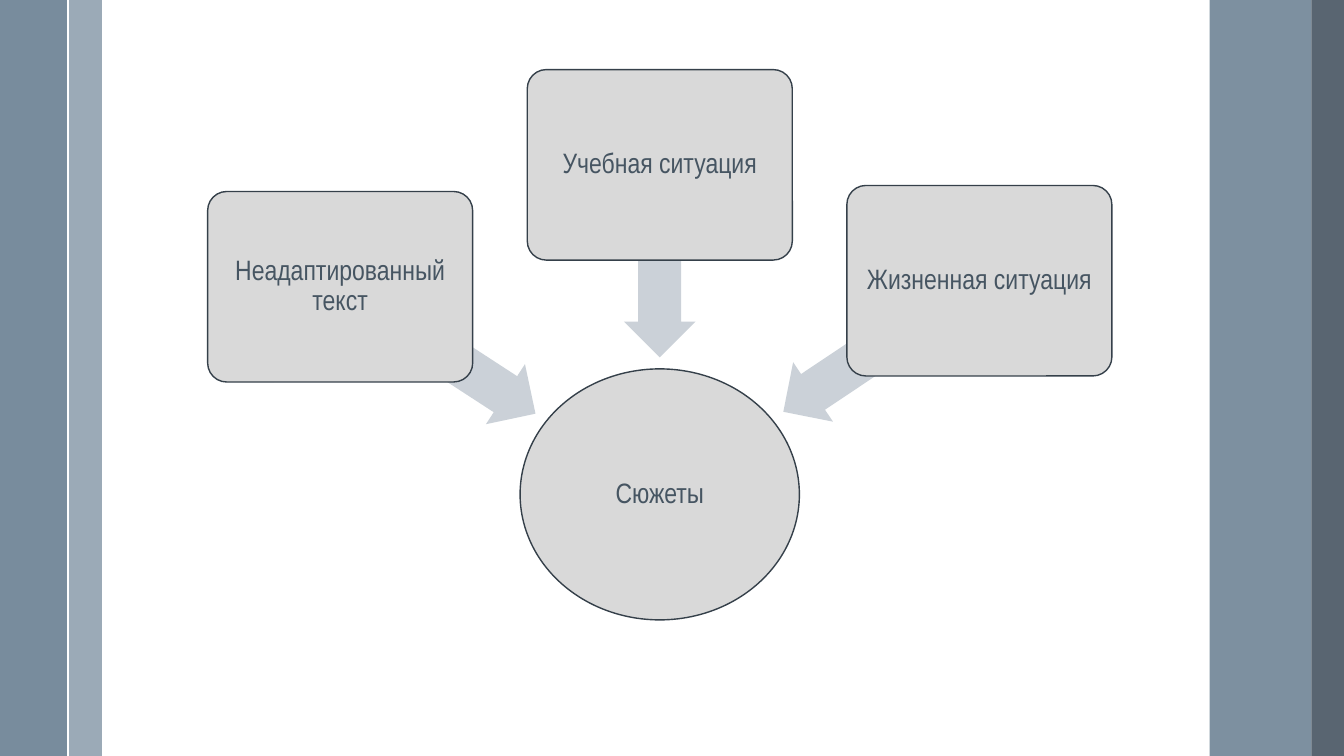
from math import atan2, cos, degrees, sin

from lxml.etree import SubElement
from pptx import Presentation
from pptx.dml.color import RGBColor
from pptx.enum.shapes import MSO_CONNECTOR, MSO_SHAPE
from pptx.enum.text import MSO_ANCHOR, PP_ALIGN
from pptx.oxml.ns import qn
from pptx.util import Inches, Pt

SLIDE_WIDTH, SLIDE_HEIGHT = Inches(13.33), Inches(7.5)

# Places and sizes in percent of the slide
HUB_CENTER, HUB_SIZE = (49.09, 65.4), (20.78, 33.2)
CARD_SIZE = (19.72, 25.2)
CARD_STEP = 23.78
ARROW_THICKNESS = 9.47

# Left, width, colour, opacity
BANDS = [
    (5.1, 2.48, "9BAAB7", 100),
    (0, 5.03, "6A8093", 90),
    (90, 7.58, "6A8093", 87),
    (97.58, 2.42, "475562", 90),
]
# Label, column from the hub, vertical centre, arrow length
CARDS = [
    ("Неадаптированный текст", -1, 37.93, 17.33),
    ("Учебная ситуация", 0, 21.8, 14.33),
    ("Жизненная ситуация", 1, 37.13, 17.55),
]


def across(percent):
    return round(SLIDE_WIDTH * percent / 100)


def down(percent):
    return round(SLIDE_HEIGHT * percent / 100)


def point(center):
    return across(center[0]), down(center[1])


def paint(color_format, hex_color):
    color_format.rgb = RGBColor.from_string(hex_color)


def add_filled(slide, kind, center, size, fill, outline=None):
    """Add a preset shape around its centre, all in EMU."""
    left, top = (round(c - s / 2) for c, s in zip(center, size))
    shape = slide.shapes.add_shape(kind, left, top, *size)
    shape.shadow.inherit = False
    shape.fill.solid()
    paint(shape.fill.fore_color, fill)
    if outline:
        paint(shape.line.color, outline)
        shape.line.width = Pt(1)
    else:
        shape.line.fill.background()
    return shape


def add_band(slide, left, width, color, opacity):
    center = point((left + width / 2, 50))
    band = add_filled(slide, MSO_SHAPE.RECTANGLE, center, point((width, 100)), color)
    if opacity < 100:
        color_element = band.fill._xPr.find(".//" + qn("a:srgbClr"))
        SubElement(color_element, qn("a:alpha"), val=str(opacity * 1000))


def add_divider(slide, position):
    line = slide.shapes.add_connector(
        MSO_CONNECTOR.STRAIGHT, across(position), 0, across(position), SLIDE_HEIGHT)
    paint(line.line.color, "FFFFFF")
    line.line.width = Pt(1.5)
    SubElement(line._element.spPr, qn("a:effectLst"))


def add_node(slide, kind, center, size, label, inset):
    node = add_filled(slide, kind, point(center), point(size), "D9D9D9", "35404A")
    frame = node.text_frame
    frame.word_wrap = True
    frame.vertical_anchor = MSO_ANCHOR.MIDDLE
    frame.margin_left = frame.margin_right = Inches(inset)
    frame.margin_top = frame.margin_bottom = Inches(inset)
    paragraph = frame.paragraphs[0]
    paragraph.alignment = PP_ALIGN.CENTER
    paragraph.line_spacing = 0.9
    run = paragraph.add_run()
    run.text = label
    run.font.name = "Arial Narrow"
    run.font.size = Pt(20)
    paint(run.font.color, "465562")
    return node


def add_arrow(slide, card_center, length):
    """Point an arrow from a card's centre towards the hub."""
    start_x, start_y = point(card_center)
    hub_x, hub_y = point(HUB_CENTER)
    angle = atan2(hub_y - start_y, hub_x - start_x)
    reach = across(length)
    middle = (start_x + reach / 2 * cos(angle), start_y + reach / 2 * sin(angle))
    arrow = add_filled(slide, MSO_SHAPE.LEFT_ARROW, middle,
                       (reach, down(ARROW_THICKNESS)), "CBD1D8")
    arrow.adjustments[0], arrow.adjustments[1] = 0.6, 0.5
    arrow.rotation = (degrees(angle) + 180) % 360


def main():
    presentation = Presentation()
    presentation.slide_width, presentation.slide_height = SLIDE_WIDTH, SLIDE_HEIGHT
    slide = presentation.slides.add_slide(presentation.slide_layouts[6])

    # Side bands
    for band in BANDS:
        add_band(slide, *band)
    add_divider(slide, 5.03)

    # Hub with its three sources
    add_node(slide, MSO_SHAPE.OVAL, HUB_CENTER, HUB_SIZE, "Сюжеты", 0.01)
    for label, column, middle, length in CARDS:
        center = (HUB_CENTER[0] + column * CARD_STEP, middle)
        add_arrow(slide, center, length)
        card = add_node(slide, MSO_SHAPE.ROUNDED_RECTANGLE, center, CARD_SIZE, label, 0.04)
        card.adjustments[0] = 0.1

    presentation.save("out.pptx")


if __name__ == "__main__":
    main()
